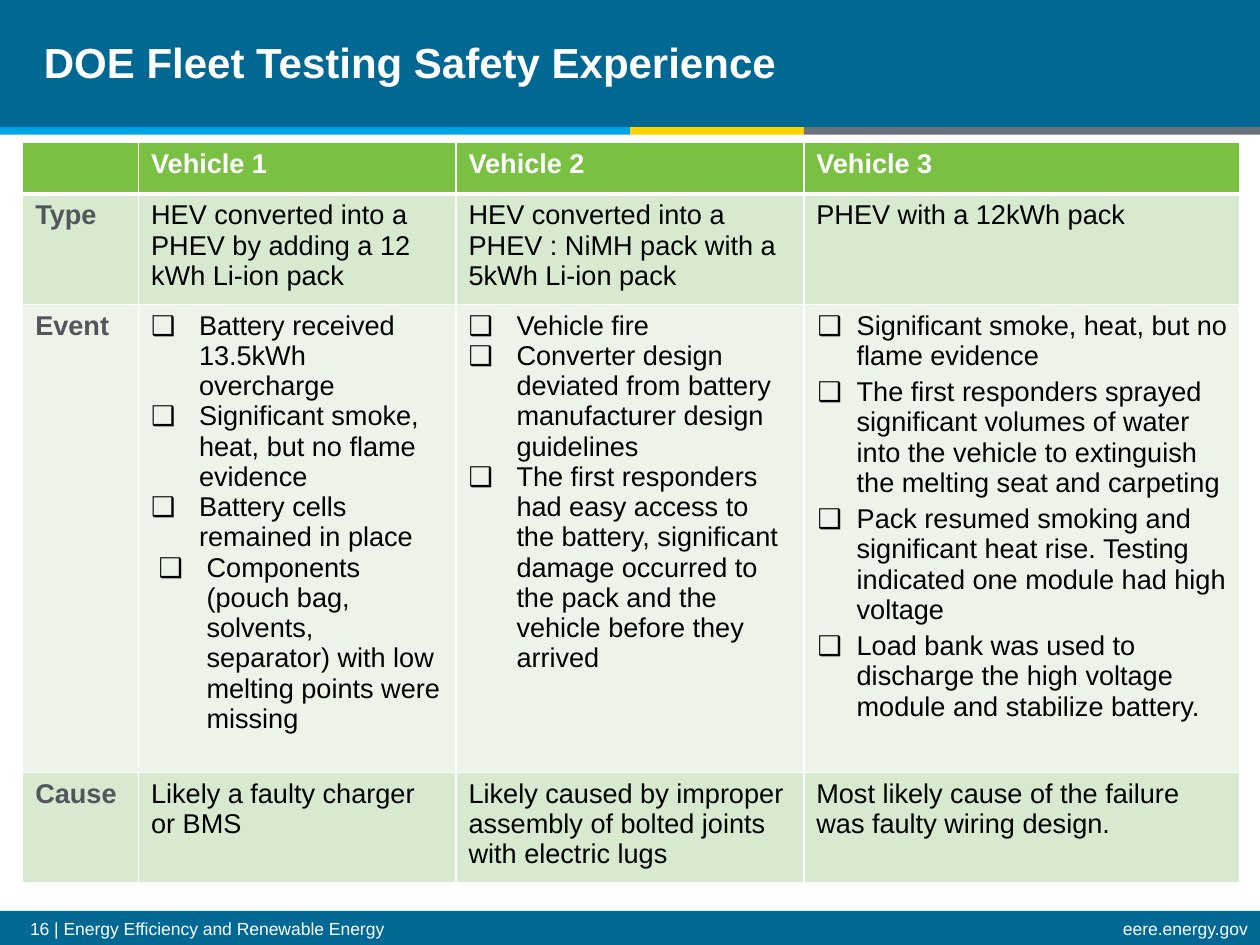
from lxml.etree import SubElement
from pptx import Presentation
from pptx.dml.color import RGBColor
from pptx.enum.shapes import MSO_SHAPE
from pptx.enum.text import MSO_ANCHOR, PP_ALIGN
from pptx.oxml.ns import qn
from pptx.util import Inches, Pt

WHITE = RGBColor(0xFF, 0xFF, 0xFF)
BLACK = RGBColor(0x00, 0x00, 0x00)
NAVY = RGBColor(0x00, 0x68, 0x92)
SKY = RGBColor(0x00, 0xA4, 0xE4)
YELLOW = RGBColor(0xFF, 0xD2, 0x00)
GREY = RGBColor(0x6A, 0x73, 0x7B)
LABEL_GREY = RGBColor(0x50, 0x56, 0x5C)
GREEN = RGBColor(0x7A, 0xC1, 0x43)
BAND_DARK = RGBColor(0xD7, 0xE9, 0xCF)
BAND_LIGHT = RGBColor(0xEC, 0xF4, 0xE9)

GRID_COLS, GRID_ROWS = 100, 75

HEADINGS = ["", "Vehicle 1", "Vehicle 2", "Vehicle 3"]
TYPES = [
    "Type",
    "HEV converted into a PHEV by adding a 12 kWh Li-ion pack",
    "HEV converted into a PHEV : NiMH pack with a 5kWh Li-ion pack",
    "PHEV with a 12kWh pack",
]
EVENTS = [
    ["Battery received 13.5kWh overcharge",
     "Significant smoke, heat, but no flame evidence",
     "Battery cells remained in place",
     "Components (pouch bag, solvents, separator) with low melting points were missing"],
    ["Vehicle fire",
     "Converter design deviated from battery manufacturer design guidelines",
     "The first responders had easy access to the battery, significant damage "
     "occurred to the pack and the vehicle before they arrived"],
    ["Significant smoke, heat, but no flame evidence",
     "The first responders sprayed significant volumes of water into the vehicle "
     "to extinguish the melting seat and carpeting",
     "Pack resumed smoking and significant heat rise. Testing indicated one module "
     "had high voltage",
     "Load bank was used to discharge the high voltage module and stabilize battery."],
]
CAUSES = [
    "Cause",
    "Likely a faulty charger or BMS",
    "Likely caused by improper assembly of bolted joints with electric lugs",
    "Most likely cause of the failure was faulty wiring design.",
]


class SlideBuilder:
    """Draws in one style; lengths are columns and rows of the slide grid."""

    font = "Arial"
    table_size = 15.5

    def __init__(self, prs):
        self.s = prs.slides.add_slide(prs.slide_layouts[6])
        self.col = prs.slide_width / GRID_COLS
        self.row = prs.slide_height / GRID_ROWS

    def box(self, left, top, width, height):
        return (round(left * self.col), round(top * self.row),
                round(width * self.col), round(height * self.row))

    def bar(self, left, top, width, height, color):
        sp = self.s.shapes.add_shape(MSO_SHAPE.RECTANGLE, *self.box(left, top, width, height))
        sp.shadow.inherit = False
        sp.fill.solid()
        sp.fill.fore_color.rgb = color
        sp.line.fill.background()

    def run(self, p, text, size, color, bold=False):
        r = p.add_run()
        r.text = text
        r.font.name, r.font.size, r.font.bold = self.font, Pt(size), bold
        r.font.color.rgb = color

    def text(self, left, top, width, height, text, size, bold=False,
             align=PP_ALIGN.LEFT, anchor=MSO_ANCHOR.TOP):
        tf = self.s.shapes.add_textbox(*self.box(left, top, width, height)).text_frame
        tf.word_wrap = True
        tf.vertical_anchor = anchor
        p = tf.paragraphs[0]
        p.alignment = align
        self.run(p, text, size, WHITE, bold)
        return p

    def table(self, left, top, widths, heights):
        frame = self.s.shapes.add_table(
            len(heights), len(widths), *self.box(left, top, sum(widths), sum(heights)))
        table = frame.table
        table.first_row = table.horz_banding = False
        for column, width in zip(table.columns, widths):
            column.width = round(width * self.col)
        for row, height in zip(table.rows, heights):
            row.height = round(height * self.row)
        return table

    def cell(self, cell, fill, top_line=1, bottom_line=1):
        """Fills a cell and gives it white borders, with widths in points."""
        tc_pr = cell._tc.get_or_add_tcPr()
        for side, width in (("L", 1), ("R", 1), ("T", top_line), ("B", bottom_line)):
            ln = SubElement(tc_pr, qn(f"a:ln{side}"), w=str(Pt(width)))
            solid = SubElement(ln, qn("a:solidFill"))
            SubElement(solid, qn("a:srgbClr"), val=str(WHITE))
        cell.fill.solid()
        cell.fill.fore_color.rgb = fill

    def cell_text(self, cell, text, color=BLACK, bold=False):
        if text:
            self.run(cell.text_frame.paragraphs[0], text, self.table_size, color, bold)

    def cell_bullets(self, cell, items, indents, hang, gap):
        tf = cell.text_frame
        for i, (item, indent) in enumerate(zip(items, indents)):
            p = tf.add_paragraph() if i else tf.paragraphs[0]
            p_pr = p._p.get_or_add_pPr()
            p_pr.set("marL", str(Inches(indent)))
            p_pr.set("indent", str(-Inches(hang)))
            SubElement(p_pr, qn("a:buFont"), typeface=self.font)
            SubElement(p_pr, qn("a:buChar"), char="❑")
            p.space_before = Pt(gap if i else 0)
            self.run(p, item, self.table_size, BLACK)


def add_frame(b):
    b.bar(0, 0, 100, 10.1, NAVY)
    b.bar(0, 72.3, 100, 2.7, NAVY)
    left = 0
    for width, color in ((50, SKY), (13.8, YELLOW), (36.2, GREY)):
        b.bar(left, 10.1, width, 0.6, color)
        left += width
    b.text(1.4, 72.4, 79.7, 2.6, "16 | Energy Efficiency and Renewable Energy", 10)
    b.text(59.9, 72.4, 40.1, 2.6, "eere.energy.gov", 10, align=PP_ALIGN.RIGHT)
    title = b.text(2.5, 0, 61.9, 9.9, "DOE Fleet Testing Safety Experience", 24,
                   bold=True, anchor=MSO_ANCHOR.MIDDLE)
    title.line_spacing = Pt(28)


def add_vehicle_table(b):
    table = b.table(1.8, 11.3, (9.2, 25.2, 27.6, 34.6), (4.1, 8.2, 34.6, 8.1))
    rows = [HEADINGS, TYPES, ["Event"], CAUSES]
    fills = [GREEN, BAND_DARK, BAND_LIGHT, BAND_DARK]
    for i, (texts, fill) in enumerate(zip(rows, fills)):
        for j in range(len(HEADINGS)):
            b.cell(table.cell(i, j), fill, 3 if i == 1 else 1, 3 if i == 0 else 1)
        for j, text in enumerate(texts):
            color = WHITE if i == 0 else LABEL_GREY if j == 0 else BLACK
            b.cell_text(table.cell(i, j), text, color, bold=i == 0 or j == 0)

    bullet_styles = [([0.38, 0.38, 0.38, 0.44], 0.38, 0),
                     ([0.38] * 3, 0.38, 0),
                     ([0.32] * 4, 0.31, 3.4)]
    for j, (items, style) in enumerate(zip(EVENTS, bullet_styles), start=1):
        b.cell_bullets(table.cell(2, j), items, *style)


def main():
    prs = Presentation()
    prs.slide_width, prs.slide_height = Inches(10), Inches(7.5)
    b = SlideBuilder(prs)
    add_frame(b)
    add_vehicle_table(b)
    prs.save("out.pptx")


if __name__ == "__main__":
    main()
